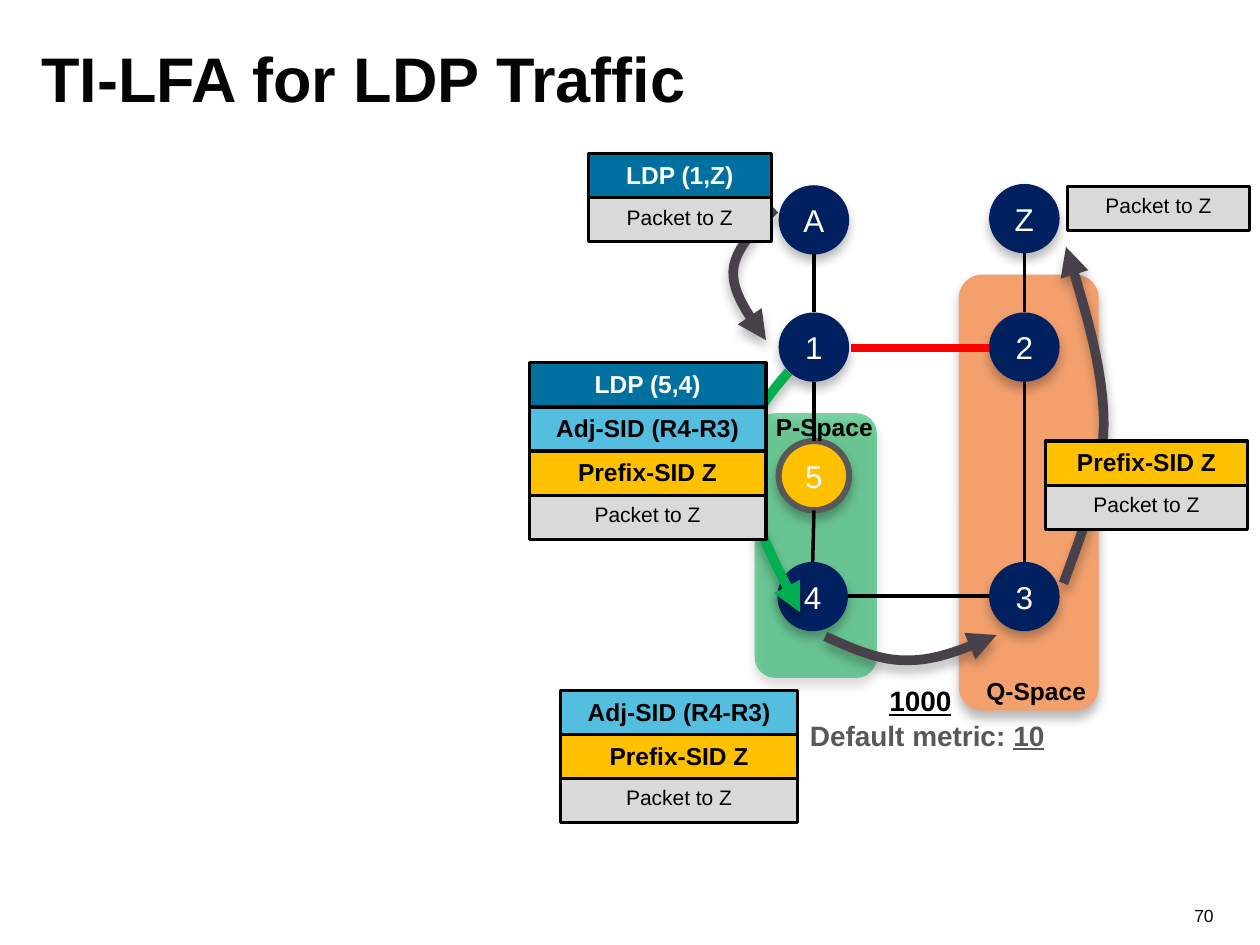
"""Build the slide on TI-LFA protection for LDP traffic."""
from lxml.etree import SubElement
from pptx import Presentation
from pptx.dml.color import RGBColor
from pptx.enum.shapes import MSO_CONNECTOR as CONNECTOR, MSO_SHAPE as SHAPE
from pptx.enum.text import MSO_ANCHOR as ANCHOR, MSO_AUTO_SIZE as AUTO_SIZE, PP_ALIGN as ALIGN
from pptx.oxml.ns import qn
from pptx.util import Inches, Pt

COLORS = {
    "black": "000000", "white": "FFFFFF", "ink": "040404", "gray": "585858",
    "navy": "002060", "blue": "0070A0", "sky": "54BEE0", "gold": "FFC000",
    "silver": "D9D9D9", "green": "00B050", "orange": "F3A06D",
    "red": "FF0000", "slate": "494149",
}
RGB = {name: RGBColor.from_string(value) for name, value in COLORS.items()}


def write(box, runs, size, color, bold=False, align=ALIGN.LEFT, anchor=ANCHOR.TOP, wrap=False):
    frame = box.text_frame
    frame.word_wrap = wrap
    frame.auto_size = AUTO_SIZE.NONE
    frame.vertical_anchor = anchor
    para = frame.paragraphs[0]
    para.alignment = align
    for text, underline in runs:
        span = para.add_run()
        span.text = text
        span.font.name = "Arial"
        span.font.size = Pt(size)
        span.font.bold = bold
        span.font.underline = underline
        span.font.color.rgb = RGB[color]
    return para


def add_shadow(shape):
    shape.shadow.inherit = False
    effects = shape._element.spPr.find(qn("a:effectLst"))
    shadow = SubElement(effects, qn("a:outerShdw"), blurRad=str(Pt(6)), dist=str(Pt(4)),
                        dir="5400000", rotWithShape="0")
    black = SubElement(shadow, qn("a:srgbClr"), val=COLORS["black"])
    SubElement(black, qn("a:alpha"), val="27000")


deck = Presentation()
deck.slide_width, deck.slide_height = Inches(10), Inches(7.5)
page = deck.slides.add_slide(deck.slide_layouts[5])
shapes = page.shapes

title = shapes.title
title.left, title.top, title.width, title.height = map(Inches, (0.23, 0.38, 9.39, 0.92))
write(title, [("TI-LFA for LDP Traffic", False)], 36, "ink", True, wrap=True).line_spacing = 0.8

spaces = [((5.99, 3.28, 0.97, 2.1), "green", 52), ((7.61, 2.18, 1.11, 3.46), "orange", 100)]
for area, color, opacity in spaces:
    space = shapes.add_shape(SHAPE.ROUNDED_RECTANGLE, *map(Inches, area))
    space.fill.solid()
    space.fill.fore_color.rgb = RGB[color]
    fill_color = space._element.spPr.find(qn("a:solidFill"))[0]
    SubElement(fill_color, qn("a:alpha"), val=str(opacity * 1000))
    space.line.fill.background()
    add_shadow(space)

NODE_WIDTH, NODE_HEIGHT = 0.56, 0.55
nodes = [("A", 6.18, 1.47), ("1", 6.18, 2.48), ("2", 7.85, 2.48), ("5", 6.18, 3.5),
         ("3", 7.85, 4.46), ("4", 6.17, 4.46), ("Z", 7.85, 1.46)]
for name, left, top in nodes:
    node = shapes.add_shape(SHAPE.OVAL, *map(Inches, (left, top, NODE_WIDTH, NODE_HEIGHT)))
    node.fill.solid()
    if name == "5":
        node.fill.fore_color.rgb = RGB["gold"]
        node.line.color.rgb = RGB["gray"]
        node.line.width = Pt(3.5)
    else:
        node.fill.fore_color.rgb = RGB["navy"]
        node.line.fill.background()
    add_shadow(node)
    write(node, [(name, False)], 18, "white", align=ALIGN.CENTER, anchor=ANCHOR.MIDDLE)

links = [
    ((6.46, 2.02, 6.46, 2.48), "black", 2), ((6.46, 3.5, 6.46, 3.03), "black", 2),
    ((7.85, 4.73, 6.73, 4.73), "black", 2), ((8.13, 3.03, 8.13, 4.46), "black", 2),
    ((8.13, 2.01, 8.13, 2.48), "black", 2), ((6.45, 4.46, 6.46, 4.05), "black", 2),
    ((7.85, 2.76, 6.75, 2.76), "red", 4.5),
]
for ends, color, width in links:
    link = shapes.add_connector(CONNECTOR.STRAIGHT, *map(Inches, ends))
    link.line.color.rgb = RGB[color]
    link.line.width = Pt(width)
    SubElement(link._element.spPr, qn("a:effectLst"))

STEPS = 12
routes = [
    ("slate", [(6.15, 1.66), (5.99, 1.82), (5.83, 1.98), (5.82, 2.15),
               (5.81, 2.33), (5.95, 2.51), (6.08, 2.7)]),
    ("green", [(6.26, 2.95), (6.07, 3.17), (5.89, 3.39), (5.9, 3.71),
               (5.92, 4.03), (6.14, 4.45), (6.35, 4.86)]),
    ("slate", [(6.55, 5.05), (6.77, 5.15), (6.99, 5.25), (7.22, 5.24),
               (7.44, 5.24), (7.68, 5.14), (7.91, 5.04)]),
    ("slate", [(8.44, 4.63), (8.59, 4.22), (8.75, 3.82), (8.76, 3.37),
               (8.76, 2.93), (8.61, 2.44), (8.46, 1.96)]),
]
for color, controls in routes:
    points = []
    for first in (0, 3):
        for step in range(1, STEPS + 1):
            t = step / STEPS
            weights = ((1 - t) ** 3, 3 * t * (1 - t) ** 2, 3 * t * t * (1 - t), t ** 3)
            curve = controls[first:first + 4]
            points.append(tuple(
                Inches(sum(weight * point[axis] for weight, point in zip(weights, curve)))
                for axis in (0, 1)))
    builder = shapes.build_freeform(*map(Inches, controls[0]))
    builder.add_line_segments(points, close=False)
    route = builder.convert_to_shape()
    route.fill.background()
    route.line.color.rgb = RGB[color]
    route.line.width = Pt(5.5)
    SubElement(route.line._get_or_add_ln(), qn("a:tailEnd"), type="triangle")
    add_shadow(route)

LABEL_HEIGHT = 0.35
label_styles = {
    "Packet to Z": ("silver", "black", 12, False),
    "Prefix-SID Z": ("gold", "black", 14, True),
    "Adj-SID (R4-R3)": ("sky", "black", 14, True),
    "LDP (1,Z)": ("blue", "white", 14, True),
    "LDP (5,4)": ("blue", "white", 14, True),
}
stacks = [
    (4.67, 1.22, 1.45, ["LDP (1,Z)", "Packet to Z"]),
    (8.47, 1.48, 1.45, ["Packet to Z"]),
    (4.2, 2.88, 1.88, ["LDP (5,4)", "Adj-SID (R4-R3)", "Prefix-SID Z", "Packet to Z"]),
    (4.45, 5.48, 1.88, ["Adj-SID (R4-R3)", "Prefix-SID Z", "Packet to Z"]),
    (8.3, 3.5, 1.6, ["Prefix-SID Z", "Packet to Z"]),
]
for left, top, width, labels in stacks:
    for row, text in enumerate(labels):
        fill, ink, size, bold = label_styles[text]
        label = shapes.add_shape(SHAPE.RECTANGLE, Inches(left), Inches(top + row * LABEL_HEIGHT),
                                 Inches(width), Inches(LABEL_HEIGHT))
        label.fill.solid()
        label.fill.fore_color.rgb = RGB[fill]
        label.line.color.rgb = RGB["black"]
        label.line.width = Pt(1.75)
        label.shadow.inherit = False
        write(label, [(text, False)], size, ink, bold, ALIGN.CENTER, wrap=True)

captions = [
    ((6.33, 5.65, 1.95, 0.31), [("Default metric: ", False), ("10", True)], 16, "gray", True),
    ((6.96, 5.38, 0.69, 0.33), [("1000", True)], 16, "black", True),
    ((6.06, 3.22, 0.97, 0.33), [("P-Space", False)], 14, "black", True),
    ((7.73, 5.32, 0.99, 0.33), [("Q-Space", False)], 14, "black", True),
    ((9.38, 7.13, 0.35, 0.26), [("70", False)], 10, "ink", False),
]
for area, runs, size, color, bold in captions:
    caption = shapes.add_textbox(*map(Inches, area))
    write(caption, runs, size, color, bold)

deck.save("out.pptx")
